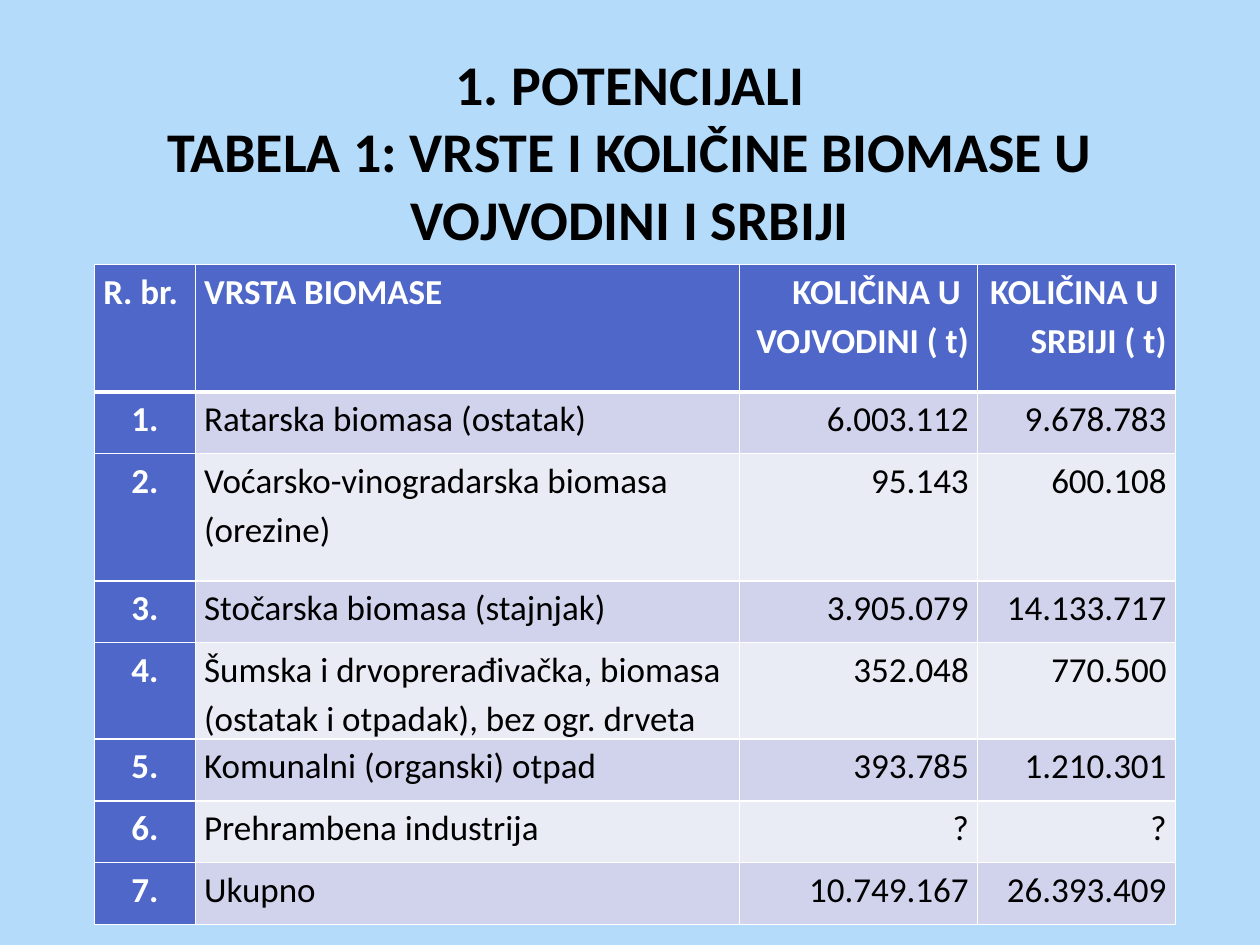
import pptx
import pptx.dml.color
import pptx.enum.text
import pptx.oxml
import pptx.oxml.ns
import pptx.util
from pptx.util import Inches

COLORS = {
    "background": "B4DCFA",
    "accent": "4E67C8",
    "odd_row": "D0D3EB",
    "even_row": "E9EBF5",
    "light": "FFFFFF",
    "dark": "000000",
}
ALIGN = pptx.enum.text.PP_ALIGN
ANCHOR = pptx.enum.text.MSO_ANCHOR

TITLE = "1. POTENCIJALI\vTABELA 1: VRSTE I KOLIČINE BIOMASE U VOJVODINI I SRBIJI"
HEADER = ["R. br.", "VRSTA BIOMASE", "KOLIČINA U \nVOJVODINI ( t)", "KOLIČINA U \nSRBIJI ( t)"]
BIOMASS = [
    ("Ratarska biomasa (ostatak)", "6.003.112", "9.678.783"),
    ("Voćarsko-vinogradarska biomasa (orezine)", "95.143", "600.108"),
    ("Stočarska biomasa (stajnjak)", "3.905.079", "14.133.717"),
    ("Šumska i drvoprerađivačka, biomasa (ostatak i otpadak), bez ogr. drveta",
     "352.048", "770.500"),
    ("Komunalni (organski) otpad", "393.785", "1.210.301"),
    ("Prehrambena industrija", "?", "?"),
    ("Ukupno", "10.749.167", "26.393.409"),
]
COLUMN_WIDTHS = [0.8, 4.32, 1.89, 1.57]
TALL_ROW, ROW = 1.01, 0.49
TALL_ROWS = (0, 2)


def rgb(name):
    return pptx.dml.color.RGBColor.from_string(COLORS[name])


def set_attributes(target, values):
    for name, value in values.items():
        setattr(target, name, value)


def write_text(frame, text, size, color, bold, paragraph_format):
    """Fill a text frame, one paragraph for each line of the text."""
    frame.text = text
    for para in frame.paragraphs:
        set_attributes(para, paragraph_format)
        for span in para.runs:
            set_attributes(span.font, {
                "name": "Calibri", "size": pptx.util.Pt(size), "bold": bold})
            span.font.color.rgb = rgb(color)


def add_title(page):
    box = page.shapes.add_textbox(Inches(0.75), Inches(0.29), Inches(8.5), Inches(1.81))
    set_attributes(box.text_frame, {"word_wrap": True, "vertical_anchor": ANCHOR.MIDDLE})
    write_text(box.text_frame, TITLE, 32, "dark", True, {"alignment": ALIGN.CENTER})


def set_borders(cell, widths):
    """Draw white borders; widths maps a side (L, R, T, B) to points."""
    properties = cell._tc.get_or_add_tcPr()
    for side, width in widths.items():
        properties.append(pptx.oxml.parse_xml(
            f'<a:ln{side} {pptx.oxml.ns.nsdecls("a")} w="{pptx.util.Pt(width)}">'
            f'<a:solidFill><a:srgbClr val="{COLORS["light"]}"/></a:solidFill>'
            f'</a:ln{side}>'))


def format_cell(cell, text, row, column):
    is_heading = row == 0 or column == 0
    if column >= 2:
        alignment = ALIGN.RIGHT
    elif column == 0 and row > 0:
        alignment = ALIGN.CENTER
    else:
        alignment = ALIGN.LEFT
    set_attributes(cell, {
        "margin_left": Inches(0.07), "margin_right": Inches(0.07),
        "margin_top": 0, "margin_bottom": 0})
    write_text(cell.text_frame, text, 20, "light" if is_heading else "dark", is_heading,
               {"alignment": alignment, "line_spacing": 1.15})
    set_borders(cell, {"L": 1, "R": 1, "T": 3 if row == 1 else 1, "B": 3 if row == 0 else 1})
    cell.fill.solid()
    band = "odd_row" if row % 2 else "even_row"
    cell.fill.fore_color.rgb = rgb("accent" if is_heading else band)


def add_biomass_table(page):
    rows = [HEADER] + [(f"{number}.", *values) for number, values in enumerate(BIOMASS, 1)]
    frame = page.shapes.add_table(len(rows), len(HEADER), Inches(0.75), Inches(2.1),
                                  Inches(sum(COLUMN_WIDTHS)), Inches(5.24))
    table = frame.table
    table.first_col = True
    for column, width in zip(table.columns, COLUMN_WIDTHS):
        column.width = Inches(width)
    for row, texts in enumerate(rows):
        table.rows[row].height = Inches(TALL_ROW if row in TALL_ROWS else ROW)
        for column, text in enumerate(texts):
            format_cell(table.cell(row, column), text, row, column)


def main():
    deck = pptx.Presentation()
    set_attributes(deck, {"slide_width": Inches(10), "slide_height": Inches(7.5)})
    page = deck.slides.add_slide(deck.slide_layouts[6])
    page.background.fill.solid()
    page.background.fill.fore_color.rgb = rgb("background")
    add_title(page)
    add_biomass_table(page)
    deck.save("out.pptx")


if __name__ == "__main__":
    main()
